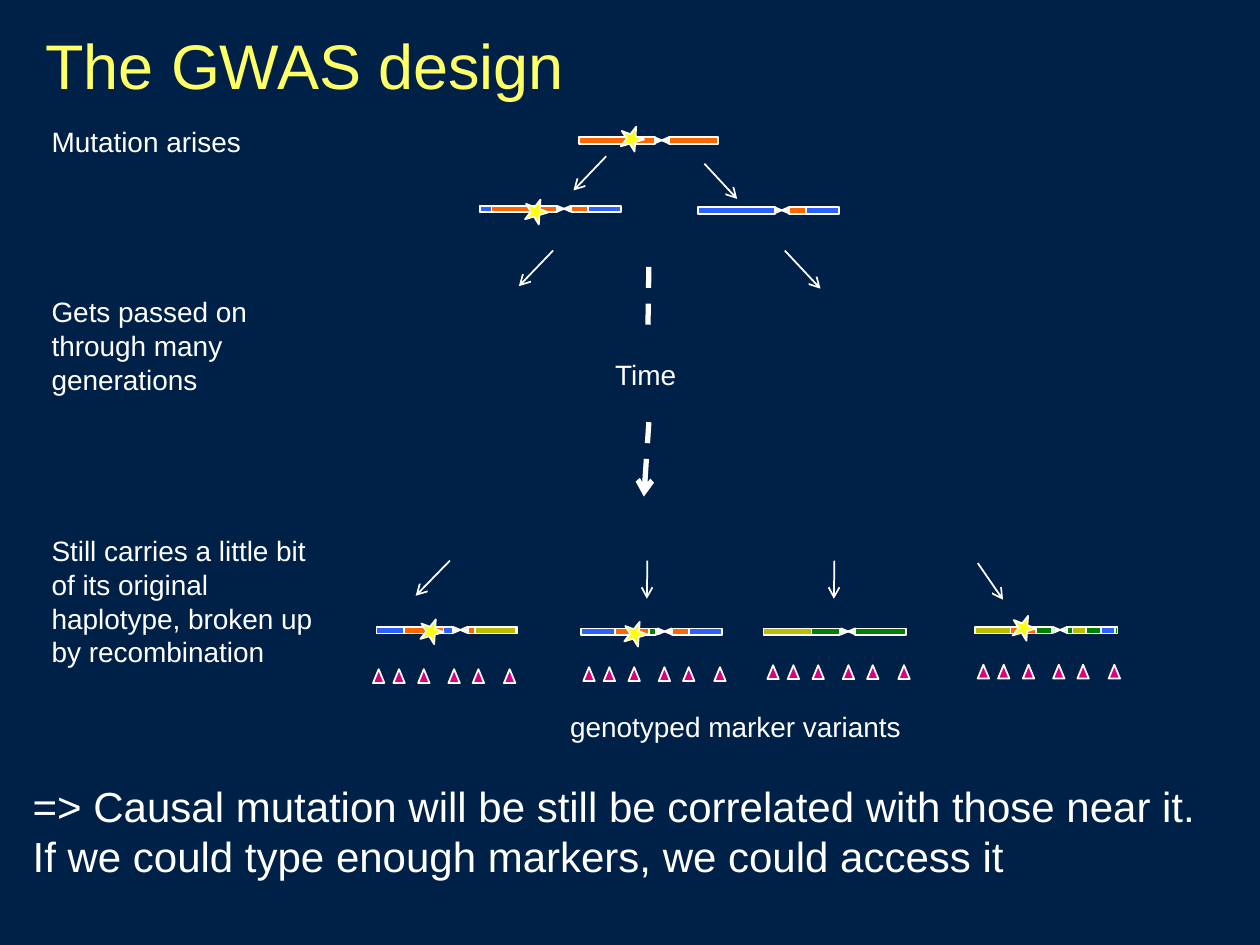
from dataclasses import dataclass
from typing import Optional

from lxml import etree
from pptx import Presentation
from pptx.dml.color import RGBColor
from pptx.enum.dml import MSO_LINE
from pptx.enum.shapes import MSO_CONNECTOR, MSO_SHAPE
from pptx.enum.text import MSO_ANCHOR, MSO_AUTO_SIZE, PP_ALIGN
from pptx.oxml.ns import qn
from pptx.util import Cm, Pt

RECT, STAR = MSO_SHAPE.RECTANGLE, MSO_SHAPE.STAR_5_POINT
HALF_ARM, MARKER = MSO_SHAPE.RIGHT_TRIANGLE, MSO_SHAPE.ISOSCELES_TRIANGLE
STRAIGHT, DASH = MSO_CONNECTOR.STRAIGHT, MSO_LINE.DASH
TOP, BOTTOM = MSO_ANCHOR.TOP, MSO_ANCHOR.BOTTOM
LEFT, CENTER, RIGHT = PP_ALIGN.LEFT, PP_ALIGN.CENTER, PP_ALIGN.RIGHT
NO_FIT = MSO_AUTO_SIZE.NONE


@dataclass(frozen=True)
class Theme:
    font: str = "Arial"
    background: str = "002147"
    title: str = "FFFF66"
    white: str = "FFFFFF"
    orange: str = "FF6600"
    blue: str = "2C60FF"
    olive: str = "BBBE00"
    green: str = "008000"
    star: str = "FFFF0D"
    marker: str = "DC0081"
    title_size: int = 36
    label_size: int = 16
    conclusion_size: int = 24
    thin: int = 1
    thick: int = 3


T = Theme()


@dataclass(frozen=True)
class Label:
    lines: tuple
    left: float
    top: float
    width: float
    height: float
    size: int = T.label_size
    color: str = T.white
    wrap: bool = False
    align: PP_ALIGN = LEFT
    anchor: MSO_ANCHOR = TOP


@dataclass(frozen=True)
class Segment:
    offset: float
    width: float
    color: str


@dataclass(frozen=True)
class Chromosome:
    left: float
    top: float
    segments: tuple
    centromere: float = 1.55
    centromere_color: str = T.orange
    mutation: Optional[tuple] = None


@dataclass(frozen=True)
class Arrow:
    x1: float
    y1: float
    x2: float
    y2: float
    width: int = T.thin
    dashed: bool = False
    head: bool = True


BAR_HEIGHT = 0.13
HALF_ARM_SIZE = (0.14, 0.06)
STAR_SIZE, STAR_ANGLE = 0.48, 21
MARKER_SIZE = (0.23, 0.28)
MARKER_OFFSETS = (0, 0.41, 0.91, 1.52, 2.01, 2.64)
MARKER_STARTS = ((7.52, 13.49), (11.76, 13.45), (15.47, 13.41), (19.71, 13.4))

LABELS = (
    Label(("The GWAS design",), 0.66, 0.36, 19.38, 1.83, T.title_size, T.title,
          wrap=True, anchor=BOTTOM),
    Label(("Mutation arises",), 0.79, 2.39, 4.37, 0.94),
    Label(("Gets passed on through many generations",), 0.79, 5.82, 6.05, 2.31, wrap=True),
    Label(("Still carries a little bit of its original haplotype, broken up by recombination",),
          0.79, 10.64, 6.05, 3, wrap=True),
    Label(("=> Causal mutation will be still be correlated with those near it.",
           "If we could type enough markers, we could access it"),
          0.41, 15.6, 24.18, 2.31, T.conclusion_size),
    Label(("Time",), 12.14, 7.09, 1.75, 0.94, align=CENTER),
    Label(("genotyped marker variants",), 11.15, 14.17, 7.26, 0.94, align=RIGHT),
)

SHORT_ARM = Segment(1.84, 0.99, T.orange)
BLUE_TIP = Segment(2.18, 0.66, T.blue)
OLIVE_GREEN = (Segment(0, 0.97, T.olive), Segment(0.97, 0.58, T.green),
               Segment(1.85, 1.02, T.green))
CHROMOSOMES = (
    Chromosome(11.68, 2.77, (Segment(0, 1.52, T.orange), Segment(1.8, 1, T.orange)),
               centromere=1.52, mutation=(12.5, 2.54)),
    Chromosome(9.68, 4.15, (Segment(0, 1.55, T.orange), SHORT_ARM, BLUE_TIP,
                            Segment(0, 0.23, T.blue)), mutation=(10.57, 4.01)),
    Chromosome(14.07, 4.18, (SHORT_ARM, BLUE_TIP, Segment(0, 1.55, T.blue))),
    Chromosome(7.59, 12.64, (Segment(0, 1.55, T.blue), SHORT_ARM, Segment(0.56, 0.79, T.orange),
                             BLUE_TIP, Segment(1.98, 0.84, T.olive)), mutation=(8.46, 12.47)),
    Chromosome(11.71, 12.67, (Segment(1.09, 0.43, T.green), Segment(0.69, 0.69, T.orange),
                              SHORT_ARM, BLUE_TIP, Segment(0, 0.69, T.blue)),
               mutation=(12.57, 12.52)),
    Chromosome(15.39, 12.67, OLIVE_GREEN, 1.57, T.green),
    Chromosome(19.66, 12.64, OLIVE_GREEN + (Segment(0.71, 0.51, T.orange),
               Segment(1.96, 0.28, T.olive), Segment(2.54, 0.28, T.blue)),
               1.57, T.green, (20.4, 12.4)),
)

ARROWS = (
    Arrow(12.22, 3.15, 11.56, 3.84),
    Arrow(14.2, 3.3, 14.86, 4.01),
    Arrow(11.15, 5.05, 10.46, 5.77),
    Arrow(15.82, 5.05, 16.54, 5.82),
    Arrow(9.07, 11.3, 8.38, 12.01),
    Arrow(13.05, 11.3, 13.04, 12.07),
    Arrow(16.82, 11.3, 16.81, 12.07),
    Arrow(19.71, 11.35, 20.22, 12.09),
    Arrow(13.08, 5.38, 13.06, 6.71, T.thick, dashed=True, head=False),
    Arrow(13.08, 8.51, 12.98, 10.01, T.thick, dashed=True),
)


def rgb(color: str) -> RGBColor:
    return RGBColor.from_string(color)


def add_label(s, label: Label) -> None:
    box = s.shapes.add_textbox(*map(Cm, (label.left, label.top, label.width, label.height)))
    tf = box.text_frame
    frame_format = {"word_wrap": label.wrap, "auto_size": NO_FIT, "vertical_anchor": label.anchor}
    for name, value in frame_format.items():
        setattr(tf, name, value)
    for i, line in enumerate(label.lines):
        p = tf.paragraphs[0] if i == 0 else tf.add_paragraph()
        p.alignment = label.align
        r = p.add_run()
        r.text = line
        for name, value in {"name": T.font, "size": Pt(label.size)}.items():
            setattr(r.font, name, value)
        r.font.color.rgb = rgb(label.color)


def add_outlined(s, kind: MSO_SHAPE, left: float, top: float, width: float, height: float,
                 color: str):
    """Add a filled preset shape with a thin white outline."""
    sp = s.shapes.add_shape(kind, *map(Cm, (left, top, width, height)))
    sp.shadow.inherit = False
    sp.fill.solid()
    sp.fill.fore_color.rgb = rgb(color)
    sp.line.color.rgb = rgb(T.white)
    sp.line.width = Pt(T.thin)
    return sp


def add_centromere(s, left: float, top: float, color: str) -> None:
    """Mirror one right triangle into four, pinched at the middle."""
    w, h = HALF_ARM_SIZE
    for col in (0, 1):
        for row in (0, 1):
            sp = add_outlined(s, HALF_ARM, left + col * w, top + row * h, w, h, color)
            xfrm = sp._element.spPr.find(qn("a:xfrm"))
            xfrm.set("flipH", str(col))
            xfrm.set("flipV", str(row))


def add_chromosome(s, c: Chromosome) -> None:
    add_centromere(s, c.left + c.centromere, c.top, c.centromere_color)
    for seg in c.segments:
        add_outlined(s, RECT, c.left + seg.offset, c.top, seg.width, BAR_HEIGHT, seg.color)
    if c.mutation:
        add_outlined(s, STAR, *c.mutation, STAR_SIZE, STAR_SIZE, T.star).rotation = STAR_ANGLE


def add_arrow(s, a: Arrow) -> None:
    cxn = s.shapes.add_connector(STRAIGHT, *map(Cm, (a.x1, a.y1, a.x2, a.y2)))
    cxn.line.color.rgb = rgb(T.white)
    cxn.line.width = Pt(a.width)
    if a.dashed:
        cxn.line.dash_style = DASH
    if a.head:
        etree.SubElement(cxn.line._get_or_add_ln(), qn("a:tailEnd"), type="arrow")
    etree.SubElement(cxn._element.spPr, qn("a:effectLst"))


def main() -> None:
    prs = Presentation()
    prs.slide_width, prs.slide_height = Cm(25.4), Cm(19.05)
    s = prs.slides.add_slide(prs.slide_layouts[6])
    s.background.fill.solid()
    s.background.fill.fore_color.rgb = rgb(T.background)
    for label in LABELS:
        add_label(s, label)
    for chromosome in CHROMOSOMES:
        add_chromosome(s, chromosome)
    for arrow in ARROWS:
        add_arrow(s, arrow)
    for left, top in MARKER_STARTS:
        for offset in MARKER_OFFSETS:
            add_outlined(s, MARKER, left + offset, top, *MARKER_SIZE, T.marker)
    prs.save("out.pptx")


if __name__ == "__main__":
    main()
